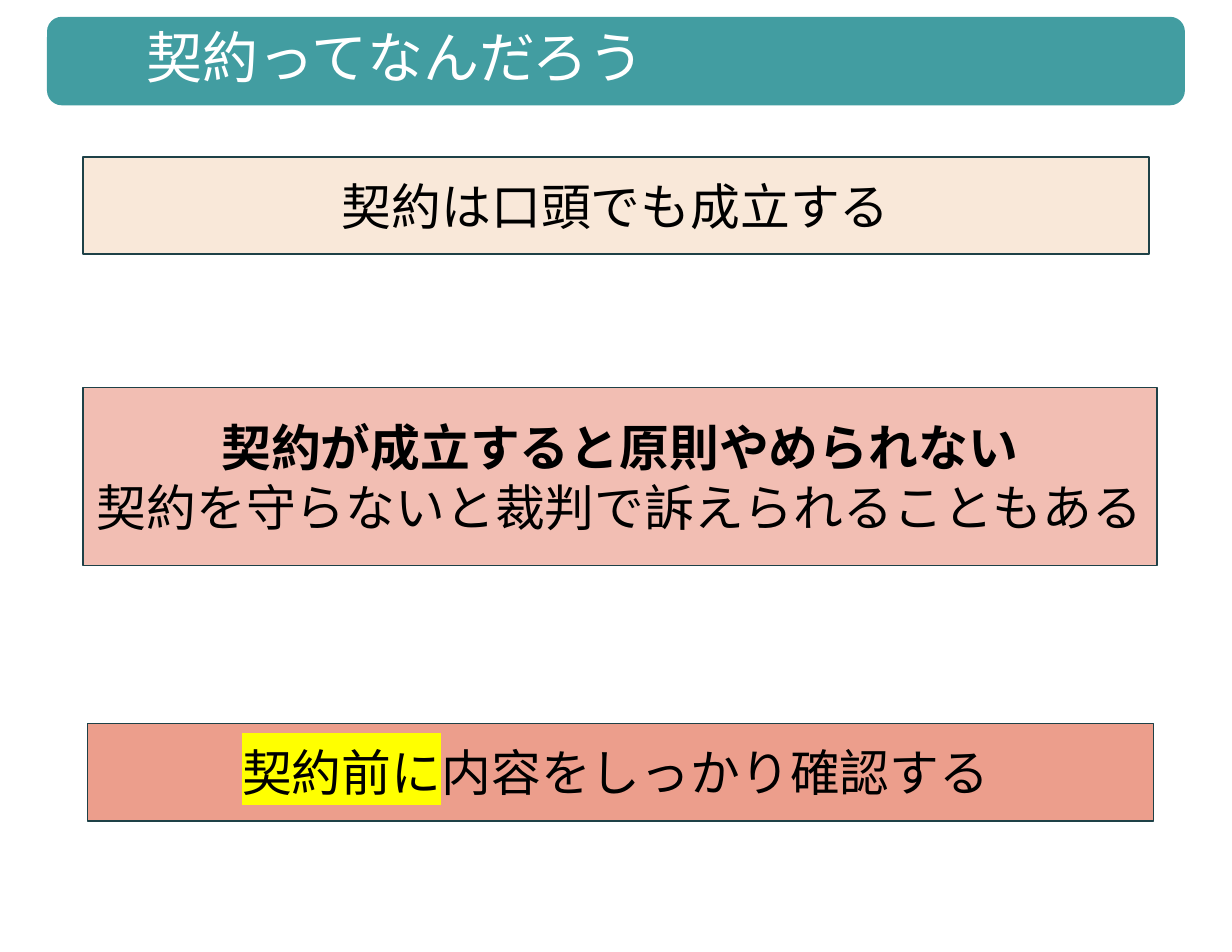
from dataclasses import dataclass
from lxml.etree import SubElement as Sub
from pptx import Presentation
from pptx.dml.color import RGBColor as RGB
from pptx.enum.shapes import MSO_SHAPE as Kind
from pptx.enum.text import MSO_ANCHOR as Anchor, PP_ALIGN as Align
from pptx.oxml.ns import qn
from pptx.util import Inches, Pt


@dataclass(frozen=True)
class Theme:
    """Colours, type sizes and font of the slide."""
    teal: str = "429DA1"
    cream: str = "F9E8D9"
    pink: str = "F2BEB3"
    coral: str = "EC9E8C"
    edge: str = "1E4147"
    ink: str = "000000"
    white: str = "FFFFFF"
    mark: str = "FFFF00"
    head: int = 36
    body: int = 32
    face: str = "Noto Sans CJK JP"


LOOK = Theme()


def style(run, size, tint, bold=False, mark=None):
    """Format one run, with an optional highlight."""
    form = {"size": Pt(size), "bold": bold}
    for name, value in form.items():
        setattr(run.font, name, value)
    run.font.color.rgb = RGB.from_string(tint)
    props = run.font._element
    if mark:
        Sub(Sub(props, qn("a:highlight")), qn("a:srgbClr"), val=mark)
    for tag in ("a:latin", "a:ea"):
        Sub(props, qn(tag), typeface=LOOK.face)


def write(shape, lines, size, tint, align=Align.CENTER, anchor=Anchor.MIDDLE):
    """Fill a shape with lines, each a list of (text, extra format) runs."""
    frame = shape.text_frame
    form = {"word_wrap": True, "vertical_anchor": anchor}
    for name, value in form.items():
        setattr(frame, name, value)
    for row, line in enumerate(lines):
        para = frame.add_paragraph() if row else frame.paragraphs[0]
        para.alignment = align
        for text, extra in line:
            run = para.add_run()
            run.text = text
            style(run, size, tint, **extra)


def panel(slide, kind, spot, fill, edge=None):
    """Add a filled shape with an optional outline."""
    shape = slide.shapes.add_shape(kind, *map(Inches, spot))
    shape.shadow.inherit = False
    shape.fill.solid()
    shape.fill.fore_color.rgb = RGB.from_string(fill)
    if edge:
        shape.line.color.rgb = RGB.from_string(edge)
        shape.line.width = Pt(1)
    else:
        shape.line.fill.background()
    return shape


def label(slide, spot, lines, size, tint, align):
    """Add a text box."""
    box = slide.shapes.add_textbox(*map(Inches, spot))
    write(box, lines, size, tint, align, Anchor.TOP)


def main():
    """Build and save the slide."""
    deck = Presentation()
    deck.slide_width, deck.slide_height = Inches(11), Inches(8.5)
    slide = deck.slides.add_slide(deck.slide_layouts[6])

    panel(slide, Kind.ROUNDED_RECTANGLE, (0.42, 0.15, 10.16, 0.79), LOOK.teal)
    label(slide, (1.21, 0.15, 9.1, 0.71), [[("契約ってなんだろう", {})]],
          LOOK.head, LOOK.white, Align.LEFT)

    cards = [
        ((0.74, 1.4, 9.52, 0.87), LOOK.cream,
         [[("契約は口頭でも成立する", {})]]),
        ((0.74, 3.46, 9.59, 1.59), LOOK.pink,
         [[("契約が成立すると原則やめられない", {"bold": True})],
          [("契約を守らないと裁判で訴えられることもある", {})]]),
        ((0.78, 6.46, 9.52, 0.87), LOOK.coral, []),
    ]
    for spot, fill, lines in cards:
        card = panel(slide, Kind.RECTANGLE, spot, fill, LOOK.edge)
        write(card, lines, LOOK.body, LOOK.ink)

    label(slide, (1.81, 6.57, 7.38, 0.64),
          [[("契約前に", {"mark": LOOK.mark}), ("内容をしっかり確認する", {})]],
          LOOK.body, LOOK.ink, Align.CENTER)
    deck.save("out.pptx")


if __name__ == "__main__":
    main()
